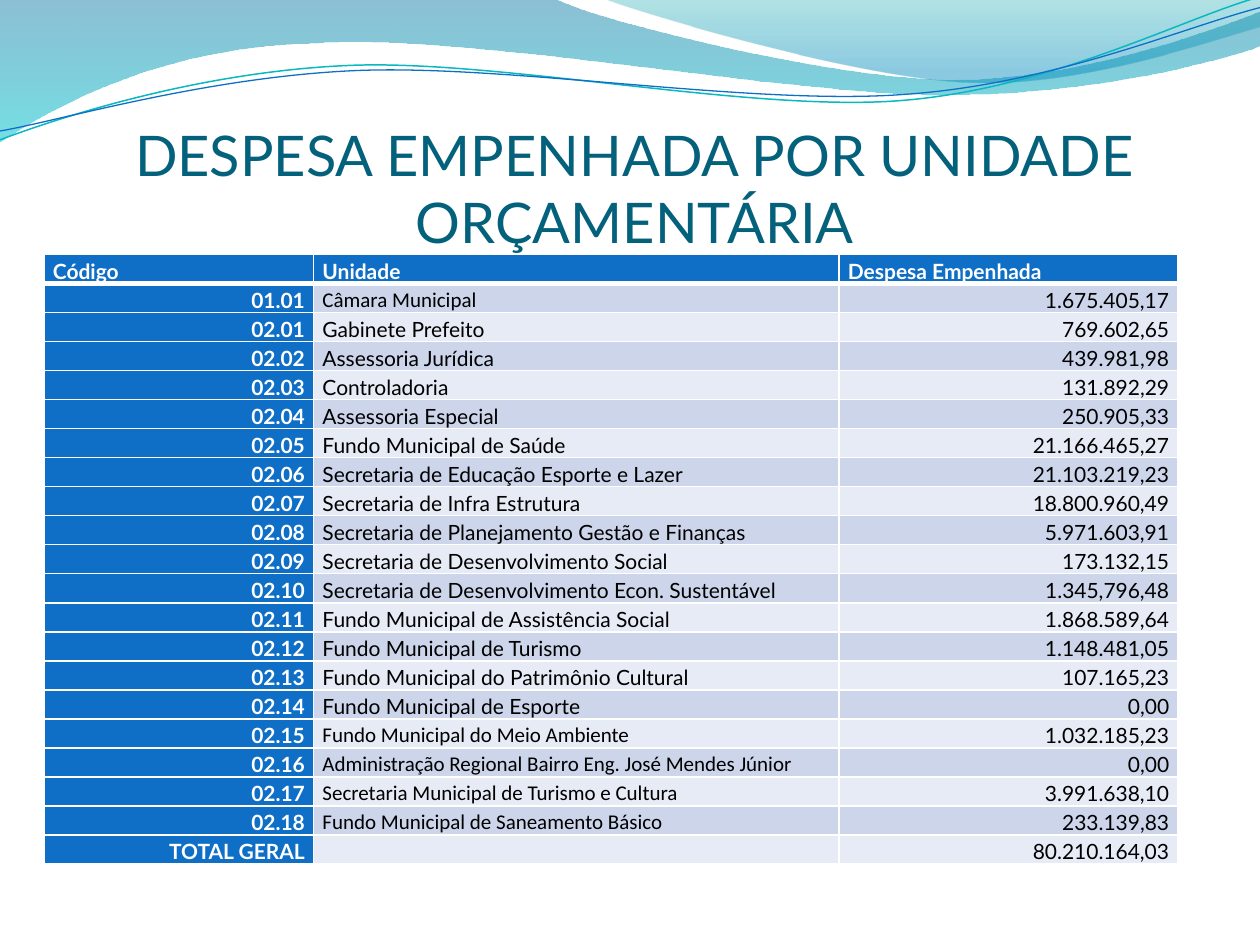
from math import cos, radians, sin
from lxml.etree import SubElement
from pptx import Presentation
from pptx.dml.color import RGBColor
from pptx.enum.text import MSO_ANCHOR as Anchor, PP_ALIGN as Align
from pptx.oxml.ns import qn
from pptx.util import Inches, Pt

# The page is a grid of 10 columns by 7.5 rows, one inch each
COLUMNS, ROWS = 10, 7.5
BLUE, WHITE, BLACK = "0F6FC6", "FFFFFF", "000000"
BANDS = ["CCD5EA", "E7EBF5"]
COLUMN_SHARES = [2.14 / 9, 4.17 / 9, 2.69 / 9]
LINE_TURN = 357.3

HEADER = ("Código", "Unidade", "Despesa Empenhada")
EXPENSES = [
    ("01.01", "Câmara Municipal", "1.675.405,17"),
    ("02.01", "Gabinete Prefeito", "769.602,65"),
    ("02.02", "Assessoria Jurídica", "439.981,98"),
    ("02.03", "Controladoria", "131.892,29"),
    ("02.04", "Assessoria Especial", "250.905,33"),
    ("02.05", "Fundo Municipal de Saúde", "21.166.465,27"),
    ("02.06", "Secretaria de Educação Esporte e Lazer", "21.103.219,23"),
    ("02.07", "Secretaria de Infra Estrutura", "18.800.960,49"),
    ("02.08", "Secretaria de Planejamento Gestão e Finanças", "5.971.603,91"),
    ("02.09", "Secretaria de Desenvolvimento Social", "173.132,15"),
    ("02.10", "Secretaria de Desenvolvimento Econ. Sustentável", "1.345,796,48"),
    ("02.11", "Fundo Municipal de Assistência Social", "1.868.589,64"),
    ("02.12", "Fundo Municipal de Turismo", "1.148.481,05"),
    ("02.13", "Fundo Municipal do Patrimônio Cultural", "107.165,23"),
    ("02.14", "Fundo Municipal de Esporte", "0,00"),
    ("02.15", "Fundo Municipal do Meio Ambiente", "1.032.185,23"),
    ("02.16", "Administração Regional Bairro Eng. José Mendes Júnior", "0,00"),
    ("02.17", "Secretaria Municipal de Turismo e Cultura", "3.991.638,10"),
    ("02.18", "Fundo Municipal de Saneamento Básico", "233.139,83"),
    ("TOTAL GERAL", "", "80.210.164,03"),
]
CALIBRI_CODES = {"01.01", "02.15", "02.16", "02.17", "02.18"}

# Outlines: two numbers are a straight step, six are a Bézier curve
LEFT_WAVE = [
    (0, 0), (4.4, -0.01), (4.76, 0.17, 6.64, 0.63, 7.58, 0.63),
    (8.53, 0.63, 9.58, 0.26, 10, 0.09), (10.01, 0.36),
    (9.83, 0.44, 8.7, 0.76, 7.46, 0.75), (6.22, 0.75, 3.82, 0.28, 2.57, 0.34),
    (1.29, 0.36, 0.46, 0.83, -0.01, 1.13), (0, 0),
]
RIGHT_WAVE = [
    (4.79, -0.01), (5.09, 0.11, 6.82, 0.62, 7.69, 0.65),
    (8.56, 0.69, 9.61, 0.32, 10, 0.21), (10, 0), (4.79, -0.01),
]
TEAL_LINE = [
    (0, 1.11), (0.48, 0.93, 1.58, 0.57, 2.77, 0.52),
    (3.95, 0.47, 5.93, 0.89, 7.13, 0.8), (8.33, 0.71, 9.38, 0.15, 9.98, -0.02),
]
BLUE_LINE = [
    (0, 1.04), (0.47, 0.96, 1.64, 0.61, 2.83, 0.56),
    (4.03, 0.51, 5.97, 0.84, 7.17, 0.75), (8.36, 0.67, 9.41, 0.21, 10, 0.06),
]


def color(code):
    return RGBColor.from_string(code)


def local_points(step, box, turn):
    """Undo the turn about the box centre and measure from the box corner."""
    left, top, width, height = box
    angle = radians(-turn)
    for x, y in zip(step[::2], step[1::2]):
        across, down = x - left - width / 2, y - top - height / 2
        yield (Inches(width / 2 + across * cos(angle) - down * sin(angle)),
               Inches(height / 2 + across * sin(angle) + down * cos(angle)))


def add_outline(page, box, outline, closed, turn=0):
    corners = [(Inches(step[-2]), Inches(step[-1])) for step in outline]
    builder = page.shapes.build_freeform(*corners[0])
    builder.add_line_segments(corners[1:], close=closed)
    shape = builder.convert_to_shape()
    shape.left, shape.top, shape.width, shape.height = map(Inches, box)
    shape.rotation = turn
    shape.shadow.inherit = False
    # Curved segments in place of the straight ones
    track = next(shape._element.iter(qn("a:path")))
    for segment in list(track):
        track.remove(segment)
    track.set("w", str(shape.width))
    track.set("h", str(shape.height))
    for index, step in enumerate(outline):
        kind = "moveTo" if index == 0 else "lnTo" if len(step) == 2 else "cubicBezTo"
        segment = SubElement(track, qn(f"a:{kind}"))
        for x, y in local_points(step, box, turn):
            SubElement(segment, qn("a:pt"), x=str(x), y=str(y))
    if closed:
        SubElement(track, qn("a:close"))
    return shape


def add_wave(page, box, outline, stops):
    wave = add_outline(page, box, outline, True)
    wave.line.fill.background()
    wave.fill.gradient()
    wave.fill.gradient_angle = 270
    for stop, (position, code, _) in zip(wave.fill.gradient_stops, stops):
        stop.position = position
        stop.color.rgb = color(code)
    for node, (_, _, opacity) in zip(wave._element.iter(qn("a:srgbClr")), stops):
        SubElement(node, qn("a:alpha"), val=str(opacity * 1000))


def add_thin_line(page, box, outline, code, weight):
    line = add_outline(page, box, outline, False, LINE_TURN)
    line.fill.background()
    line.line.color.rgb = color(code)
    line.line.width = Pt(weight)


def add_span(para, text, size, code, font="Lato", bold=False):
    span = para.add_run()
    span.text = text
    span.font.name, span.font.size, span.font.bold = font, Pt(size), bold
    span.font.color.rgb = color(code)


def add_title(page, box, text):
    frame = page.shapes.add_textbox(*map(Inches, box)).text_frame
    frame.word_wrap = True
    frame.vertical_anchor = Anchor.BOTTOM
    frame.margin_left = frame.margin_right = frame.margin_bottom = 0
    frame.margin_top = Inches(0.05)
    para = frame.paragraphs[0]
    para.alignment = Align.CENTER
    add_span(para, text, 32, "04617B")


def set_borders(cell, top, bottom):
    properties = cell._tc.get_or_add_tcPr()
    for side, weight in (("L", 1), ("R", 1), ("T", top), ("B", bottom)):
        border = SubElement(properties, qn(f"a:ln{side}"), w=str(Pt(weight)))
        fill = SubElement(border, qn("a:solidFill"))
        SubElement(fill, qn("a:srgbClr"), val=WHITE)


def fill_cell(cell, row, column, text, font):
    heading = row == 0 or column == 0
    set_borders(cell, 3 if row == 1 else 1, 3 if row == 0 else 1)
    cell.fill.solid()
    cell.fill.fore_color.rgb = color(BLUE if heading else BANDS[(row - 1) % 2])
    cell.margin_left = cell.margin_right = Inches(0.07)
    cell.margin_top = cell.margin_bottom = 0
    para = cell.text_frame.paragraphs[0]
    para.line_spacing = 1.15
    para.alignment = Align.LEFT if row == 0 or column == 1 else Align.RIGHT
    if text:
        add_span(para, text, 12, WHITE if heading else BLACK, font, heading)
    else:
        SubElement(para._p, qn("a:endParaRPr"), sz="1200")


def add_expenses(page, box):
    records = [HEADER] + EXPENSES
    holder = page.shapes.add_table(len(records), len(HEADER), *map(Inches, box))
    table = holder.table
    table.horz_banding = False
    for column, share in zip(table.columns, COLUMN_SHARES):
        column.width = Inches(box[2] * share)
    for row, record in enumerate(records):
        table.rows[row].height = Inches(0.2 if row == 1 else 0.19)
        for column, text in enumerate(record):
            special = column == 1 and record[0] in CALIBRI_CODES
            fill_cell(table.cell(row, column), row, column, text,
                      "Calibri" if special else "Lato")
    holder.height = Inches(box[3])


def main():
    deck = Presentation()
    deck.slide_width, deck.slide_height = Inches(COLUMNS), Inches(ROWS)
    page = deck.slides.add_slide(deck.slide_layouts[6])
    # Gradient stops: position, colour, opacity
    add_wave(page, (-0.01, -0.01, 10.02, 1.14), LEFT_WAVE,
             [(0, "0074A1", 45), (1, "00C6CF", 55)])
    add_wave(page, (4.79, -0.01, 5.21, 0.7), RIGHT_WAVE,
             [(0, "00A1A9", 30), (0.8, "008BBF", 45)])
    add_thin_line(page, (-0.02, 0.22, 10.02, 0.71), TEAL_LINE, "0AB8BF", 0.85)
    add_thin_line(page, (-0.02, 0.3, 10.03, 0.58), BLUE_LINE, BLUE, 0.75)
    add_title(page, (0.5, 0.77, 9.08, 1.25), "DESPESA EMPENHADA POR UNIDADE ORÇAMENTÁRIA")
    add_expenses(page, (0.35, 2.02, 9, 4.53))
    deck.save("out.pptx")


if __name__ == "__main__":
    main()
